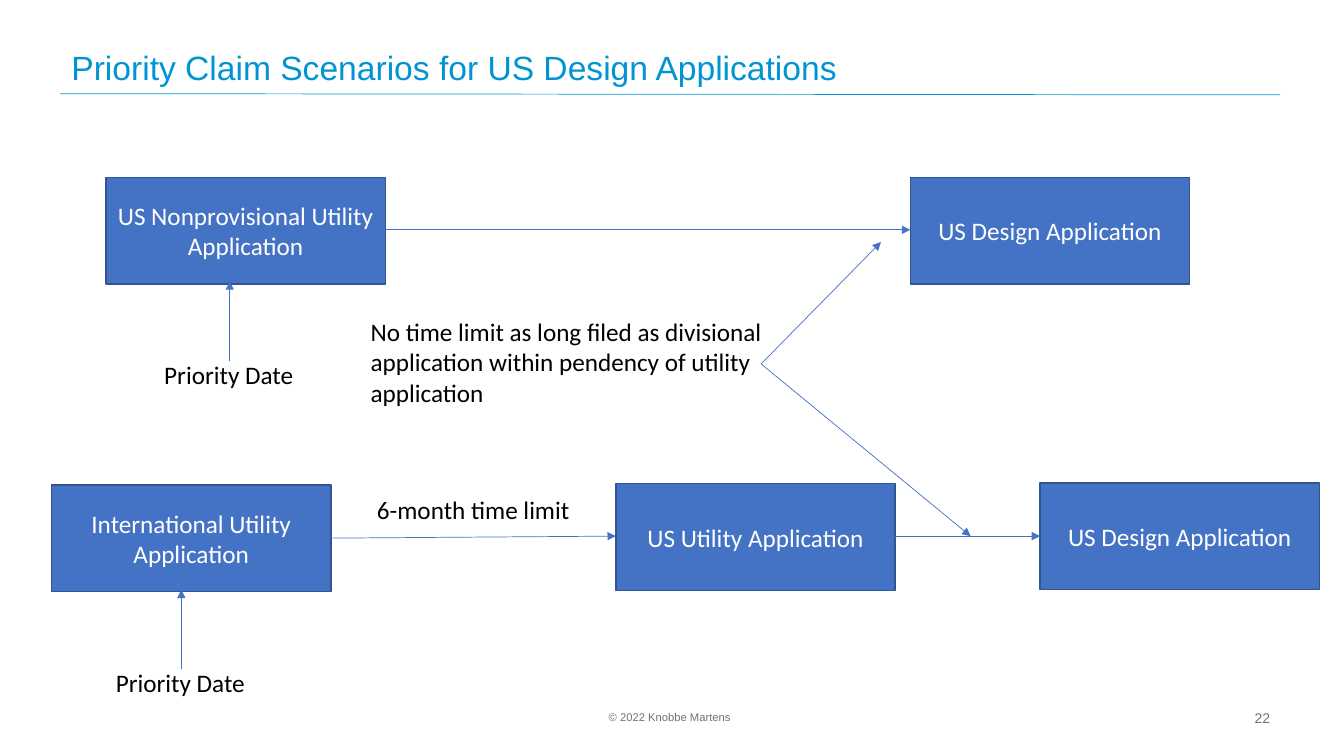
from lxml import etree
from pptx import Presentation
from pptx.dml.color import RGBColor
from pptx.enum.shapes import MSO_CONNECTOR, MSO_SHAPE
from pptx.enum.text import MSO_ANCHOR, PP_ALIGN
from pptx.oxml.ns import qn
from pptx.util import Cm, Pt

STRAIGHT, RECT = MSO_CONNECTOR.STRAIGHT, MSO_SHAPE.RECTANGLE
TOP, MIDDLE = MSO_ANCHOR.TOP, MSO_ANCHOR.MIDDLE
LEFT, CENTER, RIGHT = PP_ALIGN.LEFT, PP_ALIGN.CENTER, PP_ALIGN.RIGHT
SKY, BLUE, NAVY, GREY = "0094D2", "4472C4", "325491", "767171"
BOX_W, BOX_H = 7.04, 2.69

prs = Presentation()
prs.slide_width, prs.slide_height = Cm(33.87), Cm(19.05)
s = prs.slides.add_slide(prs.slide_layouts[6])


def rgb(color):
    return RGBColor.from_string(color)


def write(sp, text, size=18, font="Calibri", color="000000",
          align=LEFT, anchor=TOP, wrap=True, spacing=1.0):
    """Fill a shape with text, one paragraph per line."""
    tf = sp.text_frame
    tf.word_wrap, tf.vertical_anchor = wrap, anchor
    tf.text = text
    for p in tf.paragraphs:
        p.alignment, p.line_spacing = align, spacing
        for name, value in {"size": Pt(size), "name": font}.items():
            setattr(p.font, name, value)
        p.font.color.rgb = rgb(color)


# Application boxes: left, top, text
boxes = [
    (1.3, 12.22, "International Utility Application"),
    (15.52, 12.19, "US Utility Application"),
    (26.21, 12.17, "US Design Application"),
    (2.67, 4.47, "US Nonprovisional Utility\nApplication"),
    (22.94, 4.47, "US Design Application"),
]
for x, y, text in boxes:
    sp = s.shapes.add_shape(RECT, Cm(x), Cm(y), Cm(BOX_W), Cm(BOX_H))
    sp.shadow.inherit = False
    sp.fill.solid()
    sp.fill.fore_color.rgb = rgb(BLUE)
    sp.line.color.rgb = rgb(NAVY)
    sp.line.width = Pt(1)
    write(sp, text, color="FFFFFF", align=CENTER, anchor=MIDDLE)

# Lines: start, end, colour, arrowhead
lines = [
    (1.52, 2.36, 32.26, 2.39, SKY, False),
    (8.33, 13.56, 15.52, 13.51, BLUE, True),
    (22.56, 13.51, 26.21, 13.51, BLUE, True),
    (9.7, 5.79, 22.94, 5.79, BLUE, True),
    (19.18, 9.17, 22.2, 6.1, BLUE, True),
    (19.18, 9.17, 24.46, 13.51, BLUE, True),
    (5.79, 9.09, 5.79, 7.09, BLUE, True),
    (4.57, 16.87, 4.57, 14.86, BLUE, True),
]
for x1, y1, x2, y2, color, arrow in lines:
    line = s.shapes.add_connector(STRAIGHT, Cm(x1), Cm(y1), Cm(x2), Cm(y2))
    line.line.color.rgb = rgb(color)
    line.line.width = Pt(0.5)
    if arrow:
        ln = line.line._get_or_add_ln()
        etree.SubElement(ln, qn("a:tailEnd"), type="triangle")
    etree.SubElement(line._element.spPr, qn("a:effectLst"))

# Texts: left, top, width, height, text, format
label = {"wrap": False}
small = {"font": "Arial", "color": GREY}
texts = [
    (1.55, 1.09, 30.71, 1.35, "Priority Claim Scenarios for US Design Applications",
     {"size": 24, "font": "Arial", "color": SKY, "anchor": MIDDLE, "spacing": 0.9}),
    (9.25, 12.34, 5.38, 1.02, "6-month time limit", label),
    (9.09, 7.85, 10.87, 2.57, "No time limit as long filed as divisional "
     "application within pendency of utility application", {}),
    (3.89, 8.92, 3.78, 1.02, "Priority Date", label),
    (2.67, 16.69, 3.78, 1.02, "Priority Date", label),
    (15.09, 17.78, 3.63, 0.61, "© 2022 Knobbe Martens", {"size": 8, "wrap": False, **small}),
    (23.93, 17.58, 8.33, 1.02, "22",
     {"size": 10, "align": RIGHT, "anchor": MIDDLE, **small}),
]
for x, y, w, h, text, style in texts:
    write(s.shapes.add_textbox(Cm(x), Cm(y), Cm(w), Cm(h)), text, **style)

prs.save("out.pptx")
